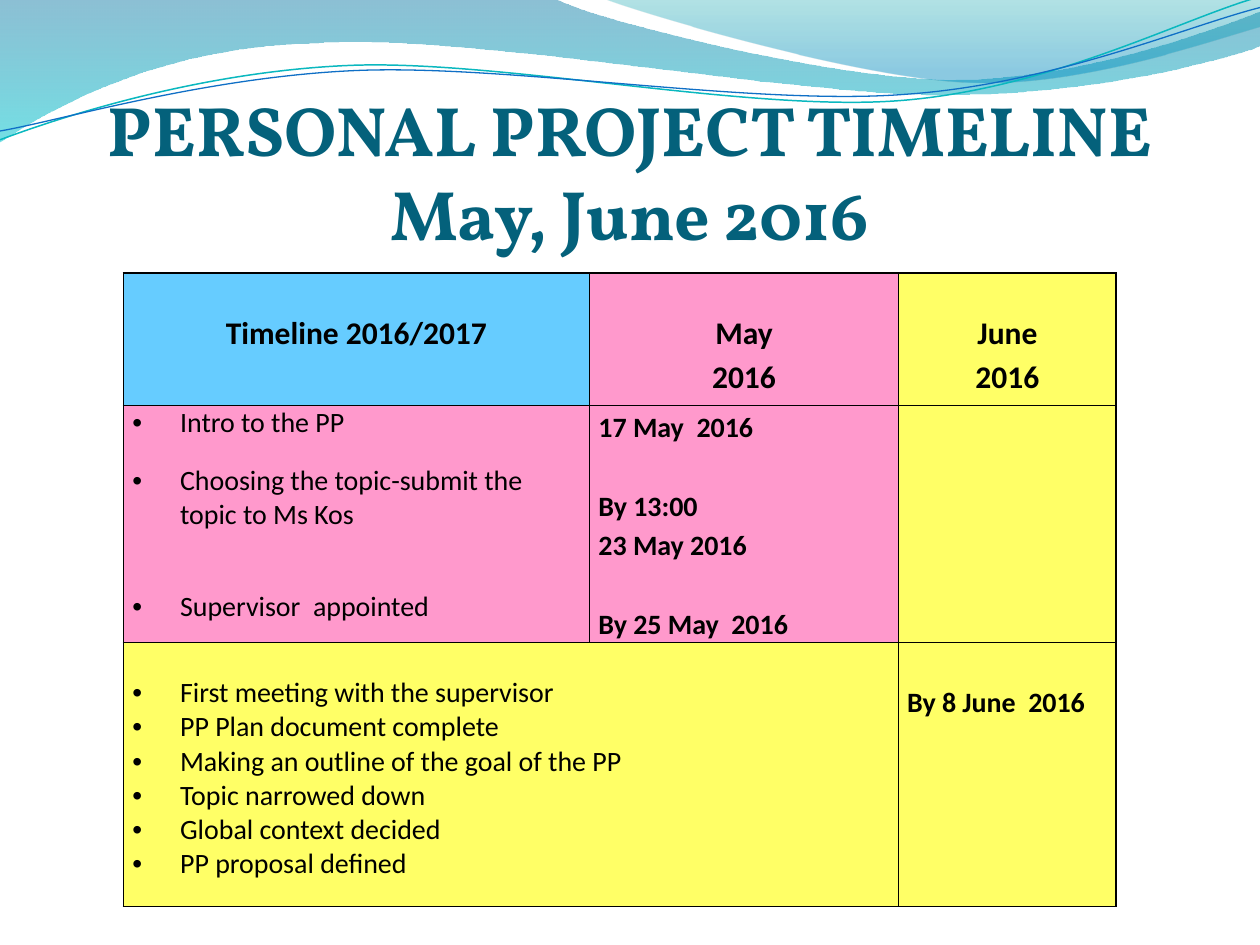
import pptx
import pptx.dml.color
import pptx.enum.text
import pptx.oxml
import pptx.oxml.ns
import pptx.util
from pptx.util import Inches

THEME = {
    "title": "04617B", "text": "000000", "border": "000000",
    "blue": "66CCFF", "pink": "FF99CC", "yellow": "FFFF66",
    "title_font": "Vollkorn", "body_font": "Calibri",
    "title_size": 40, "header_size": 18, "body_size": 16,
    "outer_border": 1.25, "inner_border": 0.5,
    # Gradient stops: position %, colour, opacity %
    "wave_gradient": [(0, "0074A1", 45), (100, "00C6CF", 55)],
    "crest_gradient": [(0, "00A1A9", 30), (80, "008BBF", 45)],
    "teal_line": "0AB8BF", "blue_line": "0F6FC6",
}
NAMESPACE = pptx.oxml.ns.nsdecls("a")
ALIGN = pptx.enum.text.PP_ALIGN


def add_curve(shapes, start, segments, closed):
    """Draw a freeform of (x, y) lines and six-number Bezier curves, in inches."""
    builder = shapes.build_freeform(*map(Inches, start))
    for segment in segments:
        lengths = [Inches(value) for value in segment]
        builder.add_line_segments(list(zip(lengths[::2], lengths[1::2])), close=False)
    if closed:
        builder.add_line_segments([], close=True)
    shape = builder.convert_to_shape()
    shape.shadow.inherit = False
    # Join the three points of each curve into one Bezier step
    lines = iter(list(shape.element.iter(pptx.oxml.ns.qn("a:lnTo"))))
    for segment in segments:
        steps = [next(lines) for _ in range(len(segment) // 2)]
        if len(steps) == 3:
            bezier = pptx.oxml.parse_xml(f"<a:cubicBezTo {NAMESPACE}/>")
            steps[0].addprevious(bezier)
            for step in steps:
                bezier.append(step[0])
                step.getparent().remove(step)
    return shape


def format_run(run, font, size, color, bold):
    run.font.name = font
    run.font.size = pptx.util.Pt(size)
    run.font.bold = bold
    run.font.color.rgb = pptx.dml.color.RGBColor.from_string(color)


presentation = pptx.Presentation()
presentation.slide_width, presentation.slide_height = Inches(10), Inches(7.5)
slide = presentation.slides.add_slide(presentation.slide_layouts[5])

# Waves across the top
waves = [
    ((0, 0), [(4.4, -0.01), (4.76, 0.17, 6.64, 0.63, 7.58, 0.63),
              (8.53, 0.63, 9.58, 0.26, 10, 0.09), (10.01, 0.36),
              (9.83, 0.44, 8.7, 0.76, 7.46, 0.75), (6.22, 0.75, 3.82, 0.28, 2.57, 0.34),
              (1.29, 0.36, 0.46, 0.83, -0.01, 1.13), (0, 0)], THEME["wave_gradient"]),
    ((4.79, -0.01), [(5.09, 0.11, 6.82, 0.62, 7.69, 0.65),
                     (8.56, 0.69, 9.61, 0.32, 10, 0.21), (10, 0), (4.79, -0.01)],
     THEME["crest_gradient"]),
]
for start, segments, gradient in waves:
    wave = add_curve(slide.shapes, start, segments, True)
    wave.line.fill.background()
    stops = "".join(
        f'<a:gs pos="{position * 1000}"><a:srgbClr val="{color}">'
        f'<a:alpha val="{opacity * 1000}"/></a:srgbClr></a:gs>'
        for position, color, opacity in gradient)
    wave.element.spPr.find(pptx.oxml.ns.qn("a:custGeom")).addnext(pptx.oxml.parse_xml(
        f'<a:gradFill {NAMESPACE} rotWithShape="1"><a:gsLst>{stops}</a:gsLst>'
        '<a:lin ang="5400000" scaled="0"/></a:gradFill>'))

wave_lines = [
    ((0, 1.11), [(0.48, 0.93, 1.58, 0.57, 2.77, 0.52), (3.95, 0.47, 5.93, 0.89, 7.13, 0.8),
                 (8.33, 0.71, 9.38, 0.15, 9.98, -0.02)], THEME["teal_line"], 0.85),
    ((0, 1.04), [(0.47, 0.96, 1.64, 0.61, 2.83, 0.56), (4.03, 0.51, 5.97, 0.84, 7.17, 0.75),
                 (8.36, 0.67, 9.41, 0.21, 10, 0.06)], THEME["blue_line"], 0.75),
]
for start, segments, color, width in wave_lines:
    curve = add_curve(slide.shapes, start, segments, False)
    curve.fill.background()
    curve.line.color.rgb = pptx.dml.color.RGBColor.from_string(color)
    curve.line.width = pptx.util.Pt(width)

# Title, in front of the waves
title = slide.shapes.title
title.element.getparent().append(title.element)
title.left, title.top, title.width, title.height = map(Inches, (0.5, 0.77, 9, 1.25))
title_frame = title.text_frame
title_frame.text = "PERSONAL PROJECT TIMELINE\vMay, June 2016"
title_frame.word_wrap = True
title_frame.auto_size = pptx.enum.text.MSO_AUTO_SIZE.NONE
title_frame.vertical_anchor = pptx.enum.text.MSO_ANCHOR.BOTTOM
title_frame.margin_left = title_frame.margin_right = title_frame.margin_bottom = 0
title_frame.margin_top = Inches(0.05)
title_frame.paragraphs[0].alignment = ALIGN.CENTER
for run in title_frame.paragraphs[0].runs:
    format_run(run, THEME["title_font"], THEME["title_size"], THEME["title"], True)

# Timeline table
column_widths = [3.7, 2.45, 1.73]
row_heights = [1.05, 1.87, 2.1]
table = slide.shapes.add_table(3, 3, Inches(0.98), Inches(2.17), Inches(sum(column_widths)),
                               Inches(sum(row_heights))).table
table.first_row = table.horz_banding = False
for column, width in zip(table.columns, column_widths):
    column.width = Inches(width)
for row, height in zip(table.rows, row_heights):
    row.height = Inches(height)
table.cell(2, 0).merge(table.cell(2, 1))

# Each cell: row, column, fill, kind, top margin in inches, [(text, space before in points)]
cells = [
    (0, 0, "blue", "header", 0.28, [("Timeline 2016/2017", 0)]),
    (0, 1, "pink", "header", 0.28, [("May", 0), ("2016", 0)]),
    (0, 2, "yellow", "header", 0.28, [("June", 0), ("2016", 0)]),
    (1, 0, "pink", "bullet", 0, [("Intro to the PP", 0),
                                 ("Choosing the topic-submit the topic to Ms Kos", 13.4),
                                 ("Supervisor  appointed", 33)]),
    (1, 1, "pink", "date", 0, [("17 May  2016", 0), ("By 13:00", 22.5),
                               ("23 May 2016", 0), ("By 25 May  2016", 22.5)]),
    (1, 2, "yellow", "date", 0, []),
    (2, 0, "yellow", "bullet", 0.27, [(text, 0) for text in (
        "First meeting with the supervisor", "PP Plan document complete",
        "Making an outline of the goal of the PP", "Topic narrowed down",
        "Global context decided", "PP proposal defined")]),
    (2, 2, "yellow", "date", 0.31, [("By 8 June  2016", 0)]),
]
for row, column, fill, kind, top, lines in cells:
    cell = table.cell(row, column)
    cell.fill.solid()
    cell.fill.fore_color.rgb = pptx.dml.color.RGBColor.from_string(THEME[fill])
    cell.margin_left = cell.margin_right = Inches(0.07)
    cell.margin_top, cell.margin_bottom = Inches(top), 0
    cell.text_frame.text = "\n".join(text for text, _ in lines)
    for paragraph, (_, space) in zip(cell.text_frame.paragraphs, lines):
        paragraph.space_before = pptx.util.Pt(space)
        paragraph.alignment = ALIGN.CENTER if kind == "header" else ALIGN.LEFT
        size = THEME["header_size"] if kind == "header" else THEME["body_size"]
        format_run(paragraph.runs[0], THEME["body_font"], size, THEME["text"], kind != "bullet")
        if kind == "bullet":
            properties = paragraph._p.get_or_add_pPr()
            properties.set("marL", str(Inches(0.38)))
            properties.set("indent", str(-Inches(0.38)))
            properties.append(pptx.oxml.parse_xml(f'<a:buFont {NAMESPACE} typeface="Arial"/>'))
            properties.append(pptx.oxml.parse_xml(f'<a:buChar {NAMESPACE} char="•"/>'))
        else:
            paragraph.line_spacing = 1.15

for row in range(3):
    for column in range(3):
        properties = table.cell(row, column)._tc.get_or_add_tcPr()
        sides = [("lnL", column == 0), ("lnR", column == 2), ("lnT", row == 0), ("lnB", row == 2)]
        for index, (side, outer) in enumerate(sides):
            width = pptx.util.Pt(THEME["outer_border" if outer else "inner_border"])
            properties.insert(index, pptx.oxml.parse_xml(
                f'<a:{side} {NAMESPACE} w="{width}"><a:solidFill>'
                f'<a:srgbClr val="{THEME["border"]}"/></a:solidFill></a:{side}>'))

presentation.save("out.pptx")
